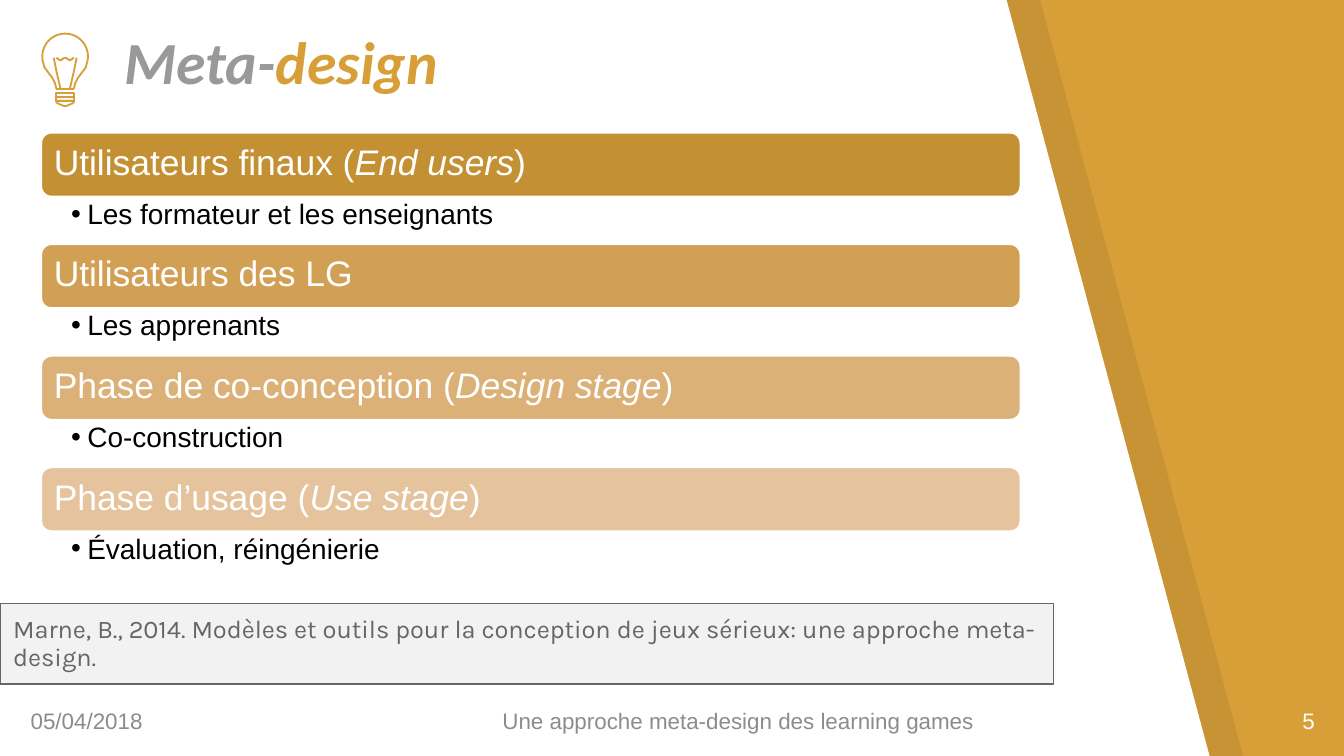
import math

import lxml.etree
import pptx
import pptx.dml.color
import pptx.enum.shapes
import pptx.enum.text
import pptx.oxml.ns
import pptx.util

Inches = pptx.util.Inches
Pt = pptx.util.Pt
Align = pptx.enum.text.PP_ALIGN
Anchor = pptx.enum.text.MSO_ANCHOR
Kind = pptx.enum.shapes.MSO_SHAPE
GOLD, WHITE, GRAY, DIM = "D89F39", "FFFFFF", "8C8C8C", "666666"
MID = 0.485
WIDE = 10
HIGH = WIDE * 9 / 16
LEFT, WIDTH, TOP, STEP = 0.3, 7.3, 0.98, 0.83


def hue(code):
    return pptx.dml.color.RGBColor.from_string(code)


def add(node, tag, **attrs):
    return lxml.etree.SubElement(node, pptx.oxml.ns.qn(tag), **attrs)


def paint(shape, fill=None, line=None, width=1, alpha=None):
    shape.shadow.inherit = False
    if fill:
        shape.fill.solid()
        shape.fill.fore_color.rgb = hue(fill)
    else:
        shape.fill.background()
    if alpha:
        color = shape.fill._xPr.find(".//" + pptx.oxml.ns.qn("a:srgbClr"))
        add(color, "a:alpha", val=str(alpha * 1000))
    if line:
        shape.line.color.rgb = hue(line)
        shape.line.width = Pt(width)
    else:
        shape.line.fill.background()


def box(slide, kind, at, **style):
    shape = slide.shapes.add_shape(kind, *map(Inches, at))
    paint(shape, **style)
    return shape


def draw(slide, points, close=False, **style):
    spots = [(Inches(x), Inches(y)) for x, y in points]
    form = slide.shapes.build_freeform(*spots[0])
    form.add_line_segments(spots[1:], close=close)
    shape = form.convert_to_shape()
    paint(shape, **style)
    return shape


def write(shape, runs, size=12, color=GRAY, font="Arial", bold=False,
          align=Align.LEFT, anchor=Anchor.MIDDLE, pad=(0.1, 0.05, 0.1, 0.05),
          space=1, before=0, bullet=False):
    frame = shape.text_frame
    frame.word_wrap = True
    frame.vertical_anchor = anchor
    (frame.margin_left, frame.margin_top,
     frame.margin_right, frame.margin_bottom) = map(Inches, pad)
    para = frame.paragraphs[0]
    para.alignment = align
    para.line_spacing = space
    para.space_before = Pt(before)
    if bullet:
        para.level = 1
        props = para._p.get_or_add_pPr()
        props.set("marL", str(Inches(0.12)))
        props.set("indent", str(Inches(-0.12)))
        add(props, "a:buFont", typeface=font)
        add(props, "a:buChar", char="•")
    for text, tone, slant in runs:
        run = para.add_run()
        run.text = text
        run.font.name = font
        run.font.size = Pt(size)
        run.font.bold = bold
        run.font.italic = slant
        run.font.color.rgb = hue(tone or color)
    add(para._p, "a:endParaRPr", sz=str(round(size * 100)))


def label(slide, at, runs, **style):
    write(slide.shapes.add_textbox(*map(Inches, at)), runs, **style)


def plain(text):
    return [(text, None, False)]


def back(slide):
    slide.background.fill.solid()
    slide.background.fill.fore_color.rgb = hue(GOLD)
    for x, style in ((0.25, {"fill": "000000", "alpha": 7}),
                     (0, {"fill": WHITE})):
        draw(slide, [(x, 0), (x, HIGH), (x + 9, HIGH), (x + 7.49, 0)],
             close=True, **style)


def topic(slide, top, fill, head, item):
    bar = box(slide, Kind.ROUNDED_RECTANGLE, (LEFT, top, WIDTH, 0.49),
              fill=fill, line=WHITE, width=2)
    bar.adjustments[0] = 0.17
    runs = [(part, None, i == 1) for i, part in enumerate(head)]
    label(slide, (LEFT + 0.02, top + 0.02, 7.25, 0.44), runs, size=19,
          color=WHITE, pad=(0.08,) * 4, space=0.9)
    label(slide, (LEFT, top + 0.48, WIDTH, 0.34), plain(item), size=15,
          color="000000", anchor=Anchor.TOP, pad=(0.23, 0.03, 0.15, 0.03),
          space=0.9, bullet=True)


def flip(points):
    return [(2 * MID - x, y) for x, y in points]


def bulb(slide):
    style = {"line": GOLD}
    for y in (0.69, 0.72):
        draw(slide, [(0.42, y), (0.55, y), (0.55, y + 0.03), (0.42, y + 0.03)],
             close=True, **style)
    base = [(0.42, 0.75), (0.42, 0.76), (0.43, 0.77), (0.48, 0.79)]
    draw(slide, base + flip(base)[::-1], close=True, **style)
    side = [(0.42, 0.66), (0.41, 0.62), (0.39, 0.58), (0.36, 0.54),
            (0.33, 0.5)]
    turns = [math.radians(a) for a in range(160, 381, 10)]
    dome = [(MID + 0.17 * math.cos(a), 0.42 + 0.17 * math.sin(a))
            for a in turns]
    draw(slide, side + dome + flip(side)[::-1], **style)
    wire = [(0.4, 0.43), (0.42, 0.53), (0.45, 0.66)]
    draw(slide, wire, **style)
    draw(slide, flip(wire), **style)
    wave = [(0.42, 0.43), (0.45, 0.45), (0.48, 0.43)]
    draw(slide, wave + flip(wave)[::-1], **style)
    draw(slide, [(0.42, 0.66), (0.55, 0.66)], **style)


def main():
    deck = pptx.Presentation()
    deck.slide_width, deck.slide_height = Inches(WIDE), Inches(HIGH)
    slide = deck.slides.add_slide(deck.slide_layouts[6])
    back(slide)
    label(slide, (0.83, 0.29, 6.14, 0.53),
          [("Meta-", "999999", True), ("design", GOLD, True)], size=32,
          font="Calibri", bold=True, anchor=Anchor.BOTTOM, pad=(0.1,) * 4)
    for x, width, text, style in (
            (0.13, 2.66, "05/04/2018", {}),
            (3.64, 5.07, "Une approche meta-design des learning games", {}),
            (9.29, 0.59, "5", {"color": WHITE, "align": Align.RIGHT})):
        label(slide, (x, 5.21, width, 0.3), plain(text), **style)
    topics = (
        ("C49034", ("Utilisateurs finaux (", "End users", ")"),
         "Les formateur et les enseignants"),
        ("D2A054", ("Utilisateurs des LG",), "Les apprenants"),
        ("DBB178", ("Phase de co-conception (", "Design stage", ")"),
         "Co-construction"),
        ("E5C39D", ("Phase d’usage (", "Use stage", ")"),
         "Évaluation, réingénierie"))
    for i, (fill, head, item) in enumerate(topics):
        topic(slide, TOP + i * STEP, fill, head, item)
    cite = box(slide, Kind.RECTANGLE, (0, 4.49, 7.84, 0.6),
               fill="F2F2F2", line=DIM, width=0.75)
    write(cite, plain("Marne, B., 2014. Modèles et outils pour la conception "
                      "de jeux sérieux: une approche meta-design."),
          size=13.6, color=DIM, font="Karla", anchor=Anchor.TOP,
          pad=(0.1,) * 4, space=0.9, before=6)
    bulb(slide)
    deck.save("out.pptx")


if __name__ == "__main__":
    main()
